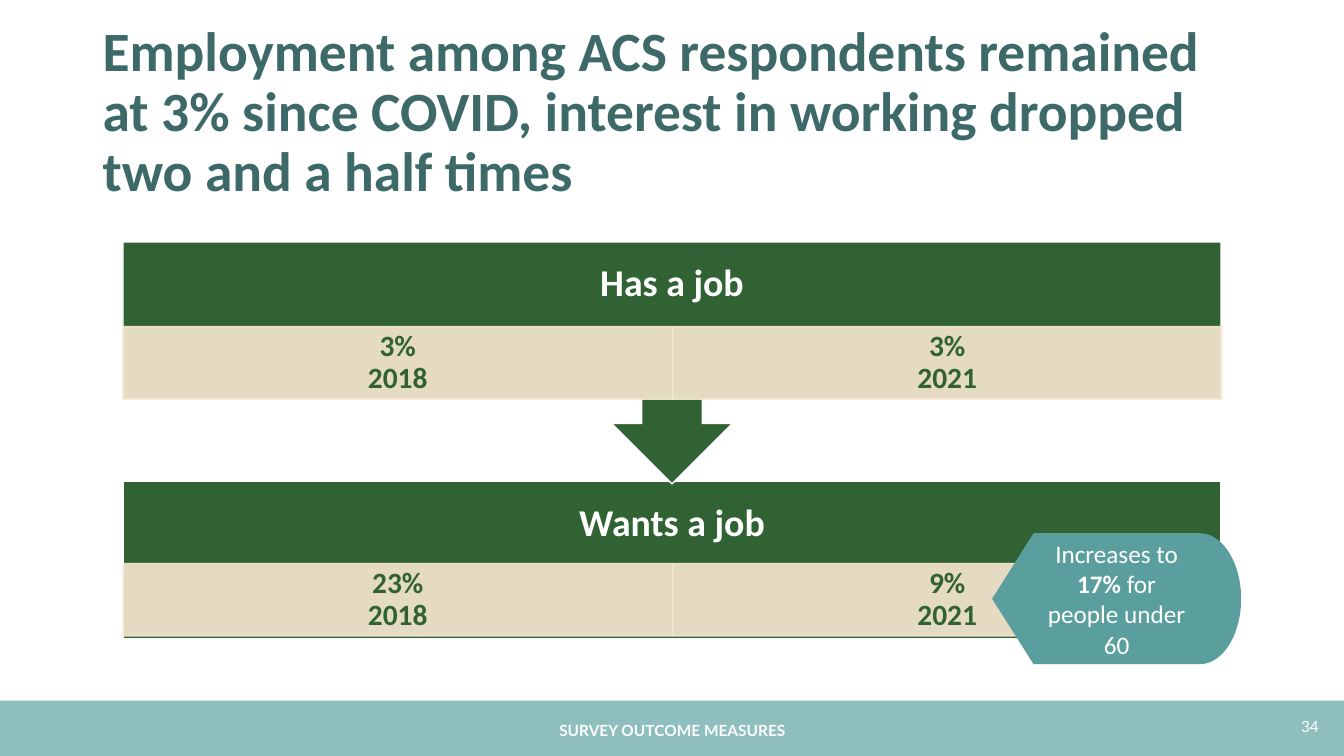
"""Build the slide on employment and interest in working, 2018 and 2021."""
import pptx
import pptx.util
import pptx.dml.color
import pptx.enum.shapes
import pptx.enum.text
import pptx.oxml
import pptx.oxml.ns

Inches = pptx.util.Inches
Pt = pptx.util.Pt
SHAPE = pptx.enum.shapes.MSO_SHAPE
ALIGN = pptx.enum.text.PP_ALIGN
ANCHOR = pptx.enum.text.MSO_ANCHOR

COLORS = {
    "title": "3D6969",
    "green": "316234",
    "sand": "F9E8D2",
    "teal": "5B9E9E",
    "footer": "8EBEBE",
    "white": "FFFFFF",
}


def rgb(name):
    return pptx.dml.color.RGBColor.from_string(COLORS[name])


def set_alpha(fill, percent):
    color = fill._xPr.find(".//" + pptx.oxml.ns.qn("a:srgbClr"))
    alpha = pptx.oxml.parse_xml(
        f'<a:alpha {pptx.oxml.ns.nsdecls("a")} val="{percent * 1000}"/>')
    color.append(alpha)


def write(tf, runs, size, color="white", font="Calibri", bold=False,
          align=ALIGN.CENTER, anchor=ANCHOR.MIDDLE, spacing=None, insets=(0.1, 0.05)):
    tf.word_wrap = True
    tf.vertical_anchor = anchor
    tf.margin_left = tf.margin_right = Inches(insets[0])
    tf.margin_top = tf.margin_bottom = Inches(insets[1])
    p = tf.paragraphs[0]
    p.alignment = align
    if spacing:
        p.line_spacing = spacing
    if isinstance(runs, str):
        runs = [(runs, bold)]
    for text, is_bold in runs:
        for i, line in enumerate(text.split("\n")):
            if i:
                p.add_line_break()
            r = p.add_run()
            r.text = line
            r.font.name = font
            r.font.size = Pt(size)
            r.font.bold = is_bold
            r.font.color.rgb = rgb(color)


class Deck:
    def __init__(self):
        self.prs = pptx.Presentation()
        self.prs.slide_width = Inches(13.33)
        self.prs.slide_height = Inches(7.5)
        self.slide = self.prs.slides.add_slide(self.prs.slide_layouts[6])

    def shape(self, kind, box, fill, line=None, alpha=None):
        sp = self.slide.shapes.add_shape(kind, *map(Inches, box))
        sp.shadow.inherit = False
        sp.fill.solid()
        sp.fill.fore_color.rgb = rgb(fill)
        if line:
            sp.line.color.rgb = rgb(line)
            sp.line.width = Pt(1)
        else:
            sp.line.fill.background()
        if alpha:
            set_alpha(sp.fill, alpha)
            set_alpha(sp.line.fill, alpha)
        return sp

    def text(self, box, runs, size, **style):
        sp = self.slide.shapes.add_textbox(*map(Inches, box))
        write(sp.text_frame, runs, size, **style)
        return sp

    def panel(self, kind, top, height, heading, cell_top, values, rotation=0):
        left, width, cell_width = 1.22, 10.89, 5.45
        sp = self.shape(kind, (left, top, width, height), "green", "white")
        sp.rotation = rotation
        self.text((left, top, width, 0.84), heading, 27, bold=True,
                  spacing=0.9, insets=(0.21, 0.21))
        for i, (value, year) in enumerate(zip(values, (2018, 2021))):
            cell = self.shape(SHAPE.RECTANGLE,
                              (left + i * cell_width, cell_top, cell_width, 0.72),
                              "sand", "sand", alpha=90)
            write(cell.text_frame, f"{value}\n{year}", 21, color="green",
                  bold=True, spacing=0.9, insets=(0.16, 0.03))


def main():
    deck = Deck()
    deck.shape(SHAPE.RECTANGLE, (0, 6.95, 13.33, 0.55), "footer")
    deck.text((0.92, 0.4, 11.5, 1.45),
              "Employment among ACS respondents remained at 3% since COVID, "
              "interest in working dropped two and a half times",
              39.6, color="title", bold=True, align=ALIGN.LEFT, spacing=0.9)
    deck.panel(SHAPE.RECTANGLE, 4.78, 1.56, "Wants a job", 5.59, ("23%", "9%"))
    deck.panel(SHAPE.UP_ARROW_CALLOUT, 2.4, 2.4, "Has a job", 3.24, ("3%", "3%"),
               rotation=180)
    callout = deck.shape(SHAPE.FLOWCHART_DISPLAY, (9.84, 5.29, 2.47, 1.3), "teal")
    write(callout.text_frame,
          [("Increases to ", False), ("17%", True), (" for people under 60", False)], 18)
    deck.text((10.18, 7.07, 3, 0.4), "34", 11, font="Lato",
              align=ALIGN.RIGHT, anchor=ANCHOR.TOP)
    deck.text((4.42, 7.1, 4.5, 0.32), "SURVEY OUTCOME MEASURES", 11, font="Lato",
              bold=True, anchor=ANCHOR.TOP)
    deck.prs.save("out.pptx")


if __name__ == "__main__":
    main()
